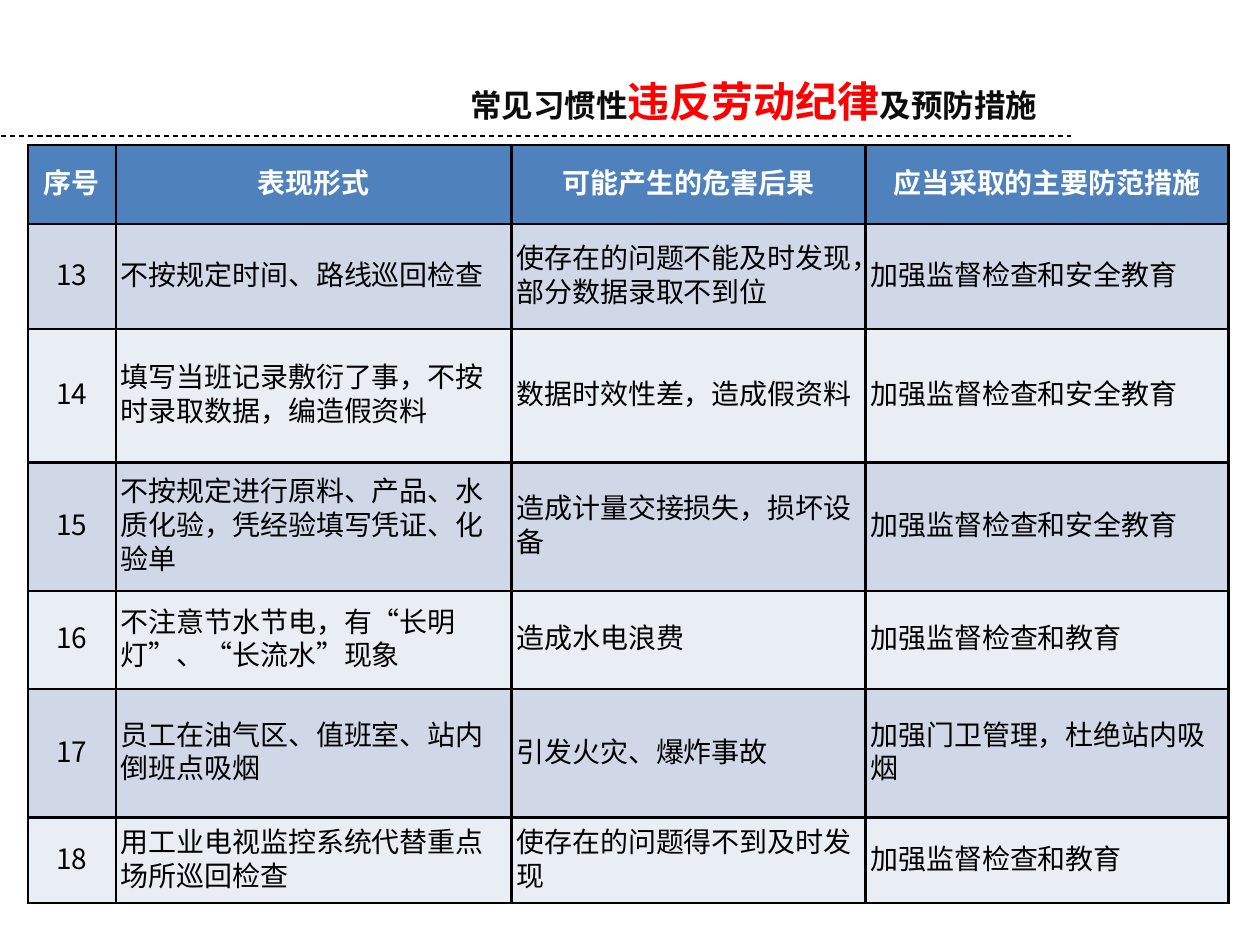
from lxml import etree
from pptx import Presentation
from pptx.dml.color import RGBColor
from pptx.enum.dml import MSO_LINE_DASH_STYLE as Dash
from pptx.enum.lang import MSO_LANGUAGE_ID as Lang
from pptx.enum.shapes import MSO_CONNECTOR as Connector
from pptx.enum.text import MSO_ANCHOR as Anchor, PP_ALIGN as Align
from pptx.oxml.ns import qn
from pptx.util import Inches, Pt

CJK_FONT = "Noto Sans CJK SC"
TITLE = [("常见习惯性", 18, "0D0D0D"),
         ("违反劳动纪律", 24, "FF0000"),
         ("及预防措施", 18, "0D0D0D")]
COL_WIDTHS = [0.7, 3.14, 2.81, 2.88]
ROW_HEIGHTS = [0.63, 0.83, 1.06, 1.02, 0.78, 1.02, 0.68]
HEADER = ["序号", "表现形式", "可能产生的危害后果", "应当采取的主要防范措施"]
VIOLATIONS = [
    ["13", "不按规定时间、路线巡回检查",
     "使存在的问题不能及时发现，部分数据录取不到位", "加强监督检查和安全教育"],
    ["14", "填写当班记录敷衍了事，不按时录取数据，编造假资料",
     "数据时效性差，造成假资料", "加强监督检查和安全教育"],
    ["15", "不按规定进行原料、产品、水质化验，凭经验填写凭证、化验单",
     "造成计量交接损失，损坏设备", "加强监督检查和安全教育"],
    ["16", "不注意节水节电，有“长明灯”、“长流水”现象",
     "造成水电浪费", "加强监督检查和教育"],
    ["17", "员工在油气区、值班室、站内倒班点吸烟",
     "引发火灾、爆炸事故", "加强门卫管理，杜绝站内吸烟"],
    ["18", "用工业电视监控系统代替重点场所巡回检查",
     "使存在的问题得不到及时发现", "加强监督检查和教育"],
]


def rgb(color):
    return RGBColor.from_string(color)


def set_font(font, name, size, color, bold):
    """Set Latin and East Asian typefaces along with size, colour and weight."""
    font.name, font.size, font.bold = name, Pt(size), bold
    font.color.rgb = rgb(color)
    font.language_id = Lang.SIMPLIFIED_CHINESE
    ea = etree.Element(qn("a:ea"), typeface=CJK_FONT)
    font._element.find(qn("a:latin")).addnext(ea)


def add_dashed_rule(slide):
    line = slide.shapes.add_connector(
        Connector.STRAIGHT, Inches(0.01), Inches(1.08), Inches(8.5), Inches(1.08))
    line.line.color.rgb = rgb("000000")
    line.line.width = Pt(0.75)
    line.line.dash_style = Dash.DASH
    etree.SubElement(line._element.spPr, qn("a:effectLst"))


def add_title(slide):
    box = slide.shapes.add_textbox(
        Inches(3.52), Inches(0.55), Inches(4.92), Inches(0.35))
    tf = box.text_frame
    tf.word_wrap = True
    p = tf.paragraphs[0]
    p.alignment = Align.CENTER
    for text, size, color in TITLE:
        r = p.add_run()
        r.text = text
        set_font(r.font, CJK_FONT, size, color, True)


def add_borders(cell):
    tc_pr = cell._tc.get_or_add_tcPr()
    for i, side in enumerate(("lnL", "lnR", "lnT", "lnB")):
        ln = etree.Element(qn(f"a:{side}"), w=str(Pt(1.5)))
        fill = etree.SubElement(ln, qn("a:solidFill"))
        etree.SubElement(fill, qn("a:srgbClr"), val="000000")
        tc_pr.insert(i, ln)


def fill_cell(cell, text, fill, font_name, color="000000", bold=False, align=Align.LEFT):
    cell.fill.solid()
    cell.fill.fore_color.rgb = rgb(fill)
    cell.vertical_anchor = Anchor.MIDDLE
    cell.margin_left = cell.margin_right = Inches(0.04)
    cell.margin_top = cell.margin_bottom = Inches(0.04)
    add_borders(cell)
    p = cell.text_frame.paragraphs[0]
    p.text = text
    p.alignment = align
    p.line_spacing = Pt(19.2)
    set_font(p.font, font_name, 16, color, bold)


def add_violation_table(slide):
    rows = [HEADER] + VIOLATIONS
    table = slide.shapes.add_table(
        len(rows), len(HEADER), Inches(0.22), Inches(1.15),
        Inches(sum(COL_WIDTHS)), Inches(sum(ROW_HEIGHTS))).table
    for column, width in zip(table.columns, COL_WIDTHS):
        column.width = Inches(width)
    for row, height in zip(table.rows, ROW_HEIGHTS):
        row.height = Inches(height)
    for i, texts in enumerate(rows):
        band = "D0D8E8" if i % 2 else "E9EDF4"
        for j, text in enumerate(texts):
            cell = table.cell(i, j)
            if i == 0:
                fill_cell(cell, text, "4F81BD", "Calibri", "FFFFFF", True, Align.CENTER)
            elif j == 0:
                fill_cell(cell, text, band, CJK_FONT, align=Align.CENTER)
            else:
                fill_cell(cell, text, band, "Times New Roman")


def main():
    prs = Presentation()
    prs.slide_width, prs.slide_height = Inches(10), Inches(7.5)
    slide = prs.slides.add_slide(prs.slide_layouts[6])
    add_dashed_rule(slide)
    add_title(slide)
    add_violation_table(slide)
    prs.save("out.pptx")


if __name__ == "__main__":
    main()
